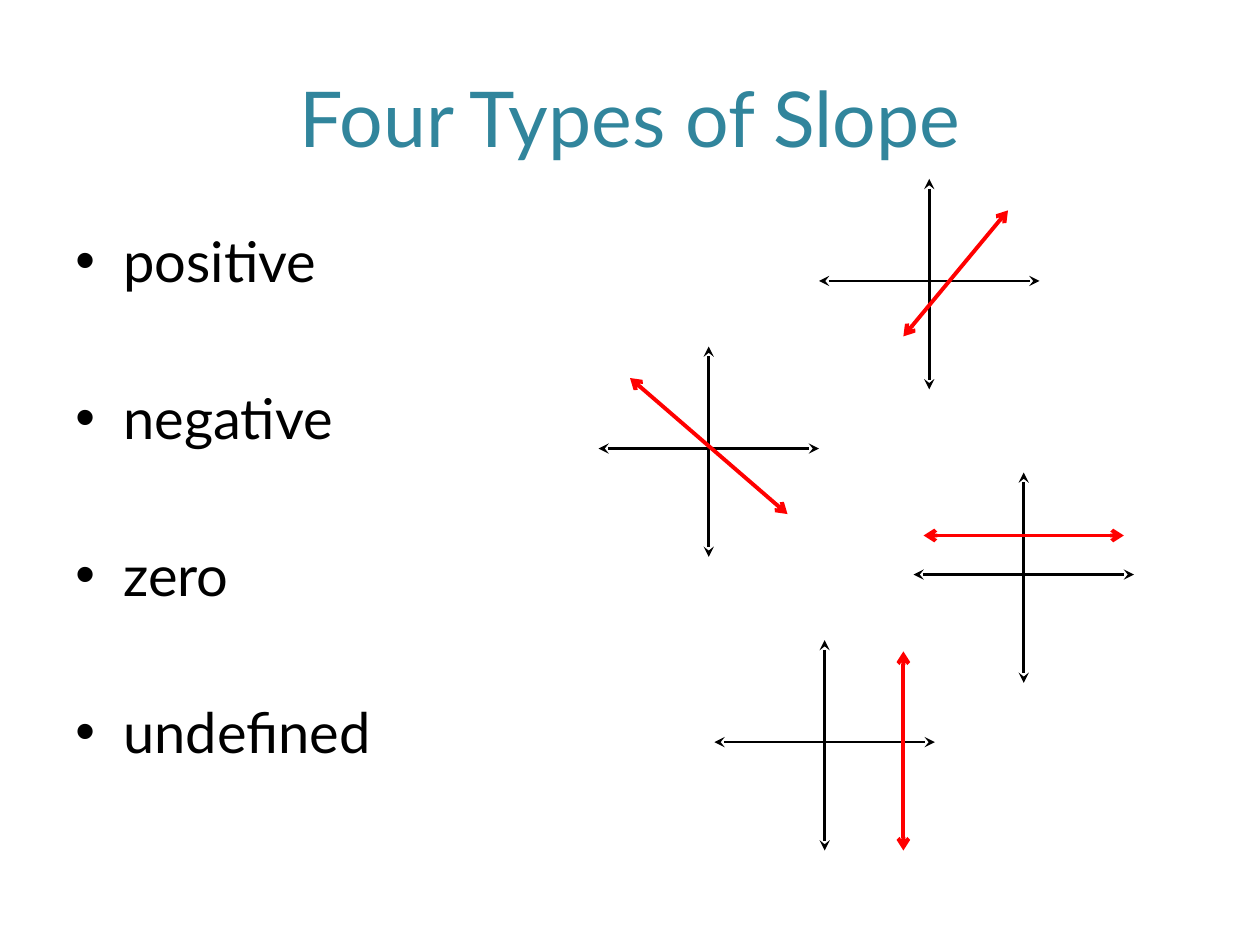
from lxml.etree import SubElement
from pptx import Presentation
from pptx.dml.color import RGBColor
from pptx.enum.shapes import MSO_CONNECTOR
from pptx.enum.text import MSO_ANCHOR as Anchor, PP_ALIGN as Align
from pptx.oxml.ns import qn
from pptx.util import Inches, Pt


def style(paragraph, size, color):
    font = paragraph.runs[0].font
    font.name = "Lato"
    font.size = Pt(size)
    font.color.rgb = RGBColor.from_string(color)


def add_arrow(shapes, start, end, color, width, head):
    """Draw a line with the same arrowhead at both ends."""
    x1, y1, x2, y2 = (Inches(v) for v in (*start, *end))
    arrow = shapes.add_connector(MSO_CONNECTOR.STRAIGHT, x1, y1, x2, y2)
    arrow.line.color.rgb = RGBColor.from_string(color)
    arrow.line.width = Pt(width)
    outline = arrow.line._get_or_add_ln()
    for tag in ("a:headEnd", "a:tailEnd"):
        SubElement(outline, qn(tag), type=head)
    SubElement(arrow._element.spPr, qn("a:effectLst"))


prs = Presentation()
prs.slide_width, prs.slide_height = Inches(10), Inches(7.5)
slide = prs.slides.add_slide(prs.slide_layouts[6])

# Title
title = slide.shapes.add_textbox(Inches(0.5), Inches(0.3), Inches(9), Inches(1.25)).text_frame
title.word_wrap = True
title.vertical_anchor = Anchor.MIDDLE
title.text = "Four Types of Slope"
title.paragraphs[0].alignment = Align.CENTER
style(title.paragraphs[0], 44, "31859C")

# Bulleted slope names
names = slide.shapes.add_textbox(Inches(0.5), Inches(1.75), Inches(9), Inches(4.95)).text_frame
names.word_wrap = True
names.text = "positive\nnegative\nzero\nundefined"
for i, name in enumerate(names.paragraphs):
    style(name, 32, "000000")
    name.space_before = Pt(51.2 if i else 0)
    props = name._p.get_or_add_pPr()
    props.set("marL", str(Inches(0.38)))
    props.set("indent", str(-Inches(0.38)))
    SubElement(props, qn("a:buFont"), typeface="Arial")
    SubElement(props, qn("a:buChar"), char="•")

# Coordinate axes, one group per graph, placed by top left corner
AXIS_W, AXIS_H, X_AXIS_DROP = 1.75, 1.67, 0.81
for left, top in [(6.5, 1.42), (4.75, 2.75), (7.25, 3.75), (5.67, 5.08)]:
    axes = slide.shapes.add_group_shape().shapes
    x_axis_y = top + X_AXIS_DROP
    y_axis_x = left + AXIS_W / 2
    add_arrow(axes, (left, x_axis_y), (left + AXIS_W, x_axis_y), "000000", 1.5, "stealth")
    add_arrow(axes, (y_axis_x, top), (y_axis_x, top + AXIS_H), "000000", 1.5, "stealth")

# Sloped lines: positive, negative, zero, undefined
for start, end in [
    ((7.17, 2.67), (8, 1.67)),
    ((5, 3), (6.25, 4.08)),
    ((7.33, 4.25), (8.92, 4.25)),
    ((7.17, 5.17), (7.17, 6.75)),
]:
    add_arrow(slide.shapes, start, end, "FF0000", 2.25, "arrow")

prs.save("out.pptx")
